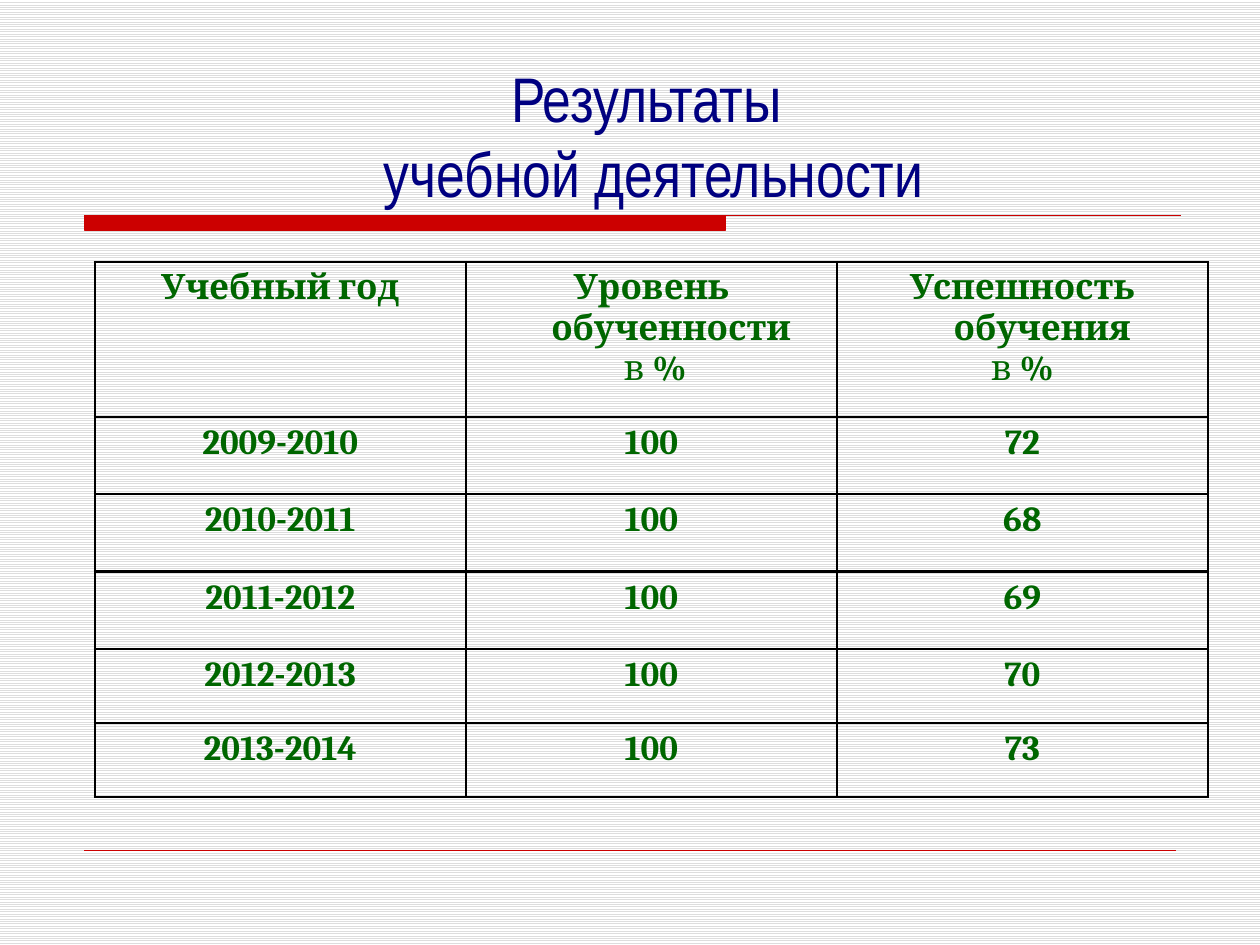
from lxml import etree
from pptx import Presentation
from pptx import util as u
from pptx.dml.color import RGBColor
from pptx.enum import dml, shapes, text
from pptx.oxml import parse_xml
from pptx.oxml.ns import qn

Cm = u.Cm
NS = 'xmlns:a="http://schemas.openxmlformats.org/drawingml/2006/main"'
RED, NAVY, GREEN, BLACK = "CC0000", "000080", "006600", "000000"

HEADS = [
    ["Учебный год"],
    ["Уровень обученности ", [(" ", True), ("в", False), (" %", True)]],
    ["Успешность обучения ", [("в", False), (" %", True)]],
]
RESULTS = [("2009-2010", 100, 72), ("2010-2011", 100, 68), ("2011-2012", 100, 69),
           ("2012-2013", 100, 70), ("2013-2014", 100, 73)]


def color(code):
    return RGBColor.from_string(code)


def write(frame, lines, font, size, code, bold=False, hang=None):
    """Each line is a string or a list of (string, bold) runs."""
    for i, line in enumerate(lines):
        para = frame.paragraphs[0] if i == 0 else frame.add_paragraph()
        para.alignment = text.PP_ALIGN.CENTER
        if hang:
            props = para._p.get_or_add_pPr()
            props.set("marL", str(hang))
            props.set("indent", str(-hang))
        for words, heavy in [(line, bold)] if isinstance(line, str) else line:
            run = para.add_run()
            run.text = words
            run.font.name, run.font.size = font, u.Pt(size)
            run.font.bold = heavy
            run.font.color.rgb = color(code)


def border(cell, **widths):
    props = cell._tc.get_or_add_tcPr()
    for side in "LRTB":
        width = u.Pt(widths.get(side, 1.5))
        props.append(parse_xml(
            f'<a:ln{side} {NS} w="{width}"><a:solidFill><a:srgbClr val="{BLACK}"/>'
            f'</a:solidFill></a:ln{side}>'))


def add_rules(slide, left, top, width, foot):
    # Thick bar that goes on as a thin line
    bar, high = Cm(12.93), Cm(0.3)
    build = slide.shapes.build_freeform(left, top)
    build.add_line_segments([(left + bar, top), (left + bar, top + high),
                             (left, top + high)], close=True)
    build.move_to(left, top)
    build.add_line_segments([(left + width, top)], close=False)
    rule = build.convert_to_shape()
    rule.shadow.inherit = False
    rule.fill.solid()
    rule.fill.fore_color.rgb = color(RED)
    rule.line.color.rgb = color(RED)
    rule.line.width = u.Pt(0.75)

    # Hairline at the foot
    line = slide.shapes.add_connector(shapes.MSO_CONNECTOR.STRAIGHT,
                                      left, foot, left + Cm(22), foot)
    line.line.color.rgb = color(RED)
    line.line.width = u.Pt(0.25)
    etree.SubElement(line._element.spPr, qn("a:effectLst"))


def add_title(slide, left, top, width, height):
    title = slide.shapes.title
    title.left, title.top, title.width, title.height = left, top, width, height
    frame = title.text_frame
    frame.word_wrap = False
    frame.auto_size = text.MSO_AUTO_SIZE.NONE
    frame.vertical_anchor = text.MSO_ANCHOR.TOP
    write(frame, ["Результаты ", "учебной деятельности"], "Arial Narrow", 36, NAVY)


def add_results(slide, left, top, width, height):
    rows = [HEADS] + [[[str(item)] for item in row] for row in RESULTS]
    table = slide.shapes.add_table(len(rows), 3, left, top, width, height).table
    table.first_row = table.horz_banding = False
    for col in table.columns:
        col.width = width // 3
    for row, high in zip(table.rows, [3.12] + [1.56] * 3 + [1.49] * 2):
        row.height = Cm(high)
    thin = {1: {"B": 1}, 2: {"T": 1}}
    for r, row in enumerate(rows):
        for c, lines in enumerate(row):
            cell = table.cell(r, c)
            border(cell, **thin.get(r, {}))
            cell.fill.background()
            write(cell.text_frame, lines, "Cambria", 20, GREEN, bold=True, hang=Cm(0.95))


def main():
    deck = Presentation()
    deck.slide_width, deck.slide_height = Cm(25.4), Cm(19.05)
    slide = deck.slides.add_slide(deck.slide_layouts[5])

    # Striped background
    fill = slide.background.fill
    fill.patterned()
    fill.pattern = dml.MSO_PATTERN.LIGHT_HORIZONTAL
    fill.fore_color.rgb = color("DDDDDD")
    fill.back_color.rgb = color("FFFFFF")

    add_rules(slide, Cm(1.7), Cm(4.34), Cm(22.1), Cm(17.15))
    add_results(slide, Cm(1.91), Cm(5.28), Cm(22.44), Cm(10.78))
    add_title(slide, Cm(6.78), Cm(1.07), Cm(12.8), Cm(2.74))
    deck.save("out.pptx")


if __name__ == "__main__":
    main()
